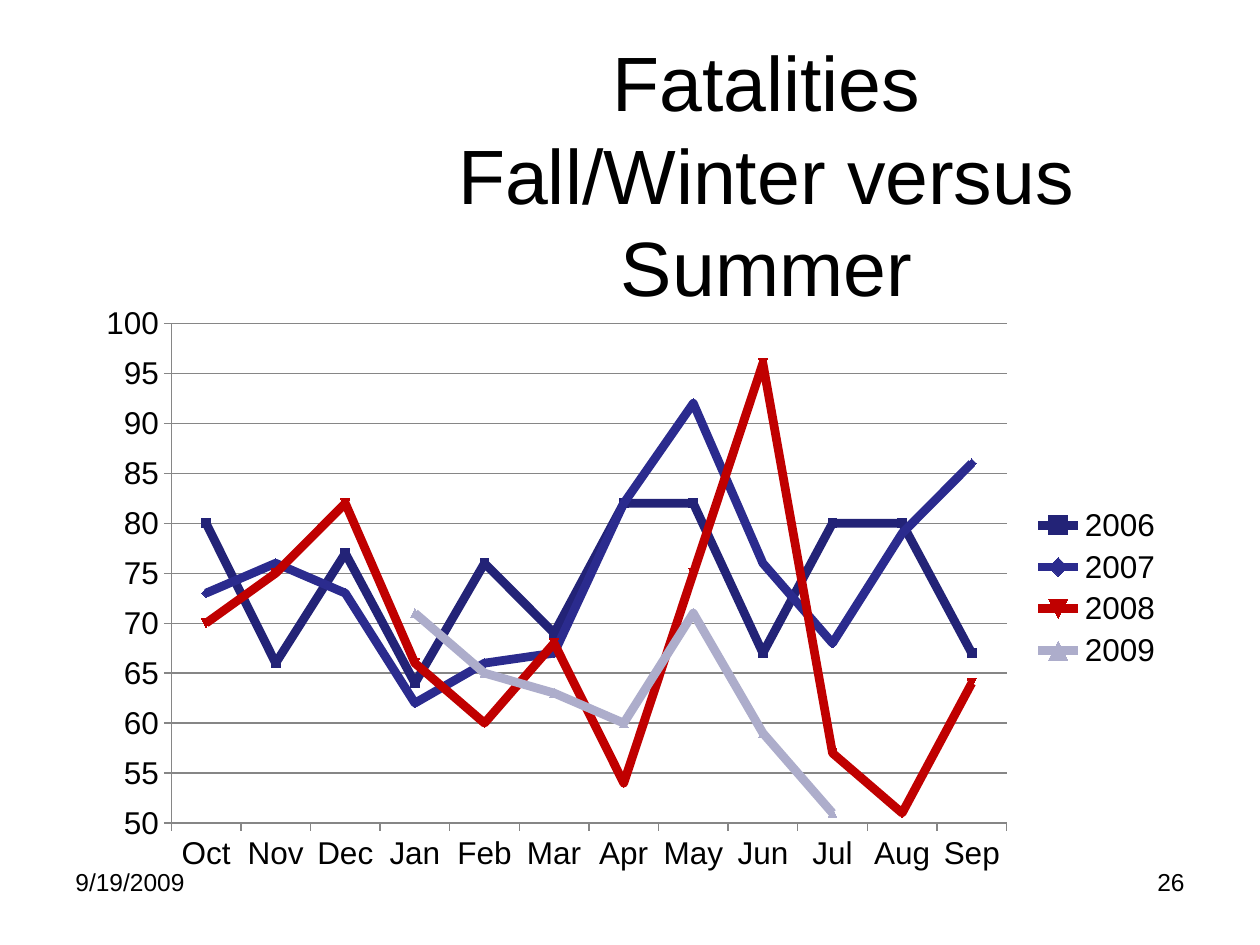
from pptx import Presentation
from pptx import util as u
from pptx.chart import data as cd
from pptx.dml import color as col
from pptx.enum import chart as ch, text as t
from pptx.oxml import parse_xml
from pptx.oxml.ns import nsdecls

COLORS = {
    "text": "000000", "grid": "868686", "2006": "232377",
    "2007": "2B2B8E", "2008": "C00000", "2009": "ADADCB",
}
MONTHS = "Oct Nov Dec Jan Feb Mar Apr May Jun Jul Aug Sep".split()
FATALITIES = {
    "2006": [80, 66, 77, 64, 76, 69, 82, 82, 67, 80, 80, 67],
    "2007": [73, 76, 73, 62, 66, 67, 82, 92, 76, 68, 79, 86],
    "2008": [70, 75, 82, 66, 60, 68, 54, 75, 96, 57, 51, 64],
    "2009": [None] * 3 + [71, 65, 63, 60, 71, 59, 51] + [None] * 2,
}


def rgb(name):
    return col.RGBColor.from_string(COLORS[name])


def apply(obj, values):
    for key, value in values.items():
        setattr(obj, key, value)


class Deck:
    COLS, ROWS = 60, 45
    FONT = "Arial"

    def __init__(self):
        self.prs = Presentation()
        apply(self.prs, {"slide_width": u.Inches(10), "slide_height": u.Inches(7.5)})
        self.s = self.prs.slides.add_slide(self.prs.slide_layouts[6])

    def box(self, x, y, w, h):
        dx = self.prs.slide_width / self.COLS
        dy = self.prs.slide_height / self.ROWS
        return [round(v) for v in (x * dx, y * dy, w * dx, h * dy)]

    def style(self, font, size):
        apply(font, {"name": self.FONT, "size": u.Pt(size)})
        font.color.rgb = rgb("text")

    def text(self, words, grid, size, align, anchor=t.MSO_ANCHOR.TOP):
        tf = self.s.shapes.add_textbox(*self.box(*grid)).text_frame
        apply(tf, {"word_wrap": True, "vertical_anchor": anchor})
        p = tf.paragraphs[0]
        apply(p, {"text": words, "alignment": align})
        for r in p.runs:
            self.style(r.font, size)

    def line(self, fmt, name, width):
        fmt.color.rgb = rgb(name)
        fmt.width = u.Pt(width)

    def line_chart(self, cats, series, grid, size, low, high, step, plot):
        data = cd.CategoryChartData()
        data.categories = cats
        for name, values in series.items():
            data.add_series(name, values)
        chart = self.s.shapes.add_chart(
            ch.XL_CHART_TYPE.LINE_MARKERS, *self.box(*grid), data).chart
        self.style(chart.font, size)
        apply(chart, {"has_title": False, "has_legend": True})
        apply(chart.legend, {"position": ch.XL_LEGEND_POSITION.RIGHT,
                             "include_in_layout": False})
        apply(chart.value_axis, {"minimum_scale": low, "maximum_scale": high,
                                 "major_unit": step, "has_major_gridlines": True})
        self.line(chart.value_axis.major_gridlines.format.line, "grid", 0.75)
        for axis in (chart.category_axis, chart.value_axis):
            axis.major_tick_mark = ch.XL_TICK_MARK.OUTSIDE
            self.line(axis.format.line, "grid", 0.75)
        chart.plots[0].vary_by_categories = False
        for line in chart.plots[0].series:
            line.smooth = False
            self.line(line.format.line, line.name, 5)
            apply(line.marker, {"style": ch.XL_MARKER_STYLE.AUTOMATIC, "size": 5})
            line.marker.format.fill.solid()
            line.marker.format.fill.fore_color.rgb = rgb(line.name)
            self.line(line.marker.format.line, line.name, 0.75)
        self.place_plot(chart, plot)

    def place_plot(self, chart, shares):
        parts = "".join(f'<c:{k} val="{v}"/>' for k, v in zip("xywh", shares))
        layout = parse_xml(
            f'<c:layout {nsdecls("c")}><c:manualLayout>'
            '<c:layoutTarget val="inner"/><c:xMode val="edge"/><c:yMode val="edge"/>'
            f'{parts}</c:manualLayout></c:layout>')
        area = chart.plots[0]._element.getparent()
        for old in area.findall(layout.tag):
            area.remove(old)
        area.insert(0, layout)


def main():
    deck = Deck()
    deck.text("Fatalities\vFall/Winter versus Summer", (16, 4.5, 41, 7.5), 44,
              t.PP_ALIGN.CENTER, t.MSO_ANCHOR.MIDDLE)
    deck.line_chart(MONTHS, FATALITIES, (4, 14, 52, 28), 18, 50, 100, 5,
                    (0.08, 0.05, 0.765, 0.85))
    deck.text("9/19/2009", (3, 41, 14, 3.1), 14, t.PP_ALIGN.LEFT)
    deck.text("26", (43, 41, 14, 3.1), 14, t.PP_ALIGN.RIGHT)
    deck.prs.save("out.pptx")


if __name__ == "__main__":
    main()
